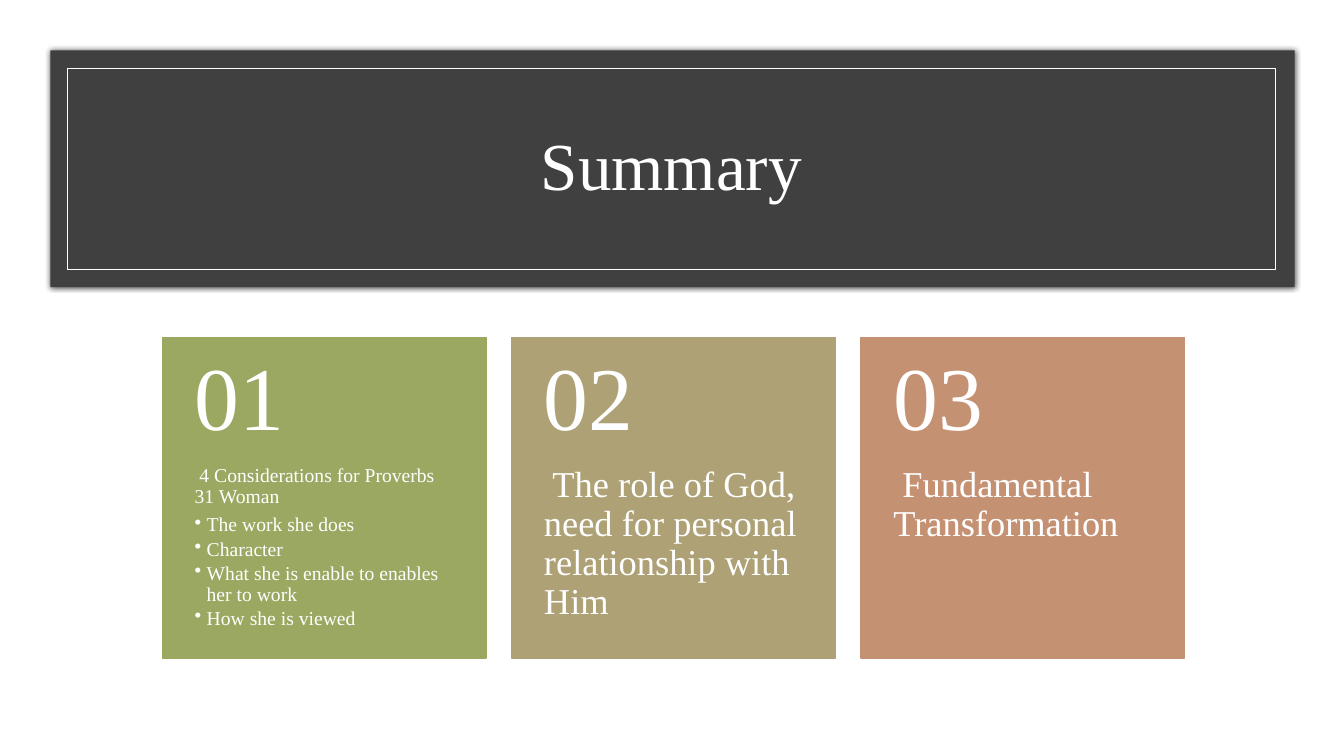
from dataclasses import dataclass

from lxml import etree
from pptx import Presentation
from pptx.dml.color import RGBColor
from pptx.enum.shapes import MSO_SHAPE
from pptx.enum.text import MSO_ANCHOR, PP_ALIGN
from pptx.oxml import parse_xml
from pptx.oxml.ns import nsdecls, qn
from pptx.util import Inches, Pt

RECT = MSO_SHAPE.RECTANGLE
TOP, MIDDLE = MSO_ANCHOR.TOP, MSO_ANCHOR.MIDDLE
LEFT, CENTER = PP_ALIGN.LEFT, PP_ALIGN.CENTER


@dataclass(frozen=True)
class Theme:
    font: str = "Times New Roman"
    text: str = "FFFFFF"
    banner: str = "404040"
    cards: tuple = ("9AA862", "ADA175", "C59173")
    title: int = 48
    number: int = 64
    statement: int = 26
    listing: int = 14


theme = Theme()
prs = Presentation()
prs.slide_width, prs.slide_height = Inches(13.33), Inches(7.5)
s = prs.slides.add_slide(prs.slide_layouts[6])


def add_rect(box, fill=None, line=None, width=1):
    sp = s.shapes.add_shape(RECT, *map(Inches, box))
    sp.shadow.inherit = False
    if fill:
        sp.fill.solid()
        sp.fill.fore_color.rgb = RGBColor.from_string(fill)
    else:
        sp.fill.background()
    if line:
        sp.line.color.rgb = RGBColor.from_string(line)
        sp.line.width = Pt(width)
    else:
        sp.line.fill.background()
    return sp


def add_text(box, text, size, bullets=(), align=LEFT, anchor=TOP,
             insets=(0.1, 0.05, 0.1, 0.05), after=0.35):
    """Add a text box; after is the paragraph spacing as a share of the type size."""
    tf = s.shapes.add_textbox(*map(Inches, box)).text_frame
    tf.word_wrap = True
    tf.vertical_anchor = anchor
    tf.margin_left, tf.margin_top, tf.margin_right, tf.margin_bottom = map(Inches, insets)
    for i, line in enumerate((text, *bullets)):
        p = tf.add_paragraph() if i else tf.paragraphs[0]
        p.alignment = align
        p.line_spacing = 0.9
        p.space_after = Pt(round(size * (0.15 if i else after), 1))
        r = p.add_run()
        r.text = line
        r.font.name = theme.font
        r.font.size = Pt(size)
        r.font.color.rgb = RGBColor.from_string(theme.text)
        if i:
            p.level = 1
            pPr = p._p.get_or_add_pPr()
            pPr.set("marL", str(Inches(0.12)))
            pPr.set("indent", str(-Inches(0.12)))
            etree.SubElement(pPr, qn("a:buChar")).set("char", "•")


# Title banner
banner = add_rect((0.5, 0.5, 12.34, 2.35), fill=theme.banner)
banner._element.spPr.find(qn("a:effectLst")).append(parse_xml(
    f'<a:outerShdw {nsdecls("a")} blurRad="{Pt(4)}" dist="0" dir="0" algn="ctr" rotWithShape="0">'
    '<a:srgbClr val="000000"><a:alpha val="66000"/></a:srgbClr></a:outerShdw>'))
add_rect((0.67, 0.68, 11.98, 1.99), line=theme.text, width=0.5)
add_text((1.16, 0.92, 11, 1.5), "Summary", theme.title, align=CENTER, anchor=MIDDLE, after=0)

# Numbered cards
cards = [
    (" 4 Considerations for Proverbs 31 Woman", theme.listing,
     ("The work she does", "Character",
      "What she is enable to enables her to work", "How she is viewed")),
    (" The role of God, need for personal relationship with Him", theme.statement, ()),
    (" Fundamental Transformation", theme.statement, ()),
]
card_left, card_top, card_w, card_h = 1.61, 3.35, 3.21, 3.18
pitch, number_h = 3.465, 1.27
for i, (text, size, bullets) in enumerate(cards):
    x = card_left + i * pitch
    color = theme.cards[i]
    add_rect((x, card_top, card_w, card_h), fill=color, line=color)
    add_text((x, card_top + number_h, card_w, card_h - number_h), text, size,
             bullets=bullets, insets=(0.32, 0, 0.32, 0.36))
    add_text((x, card_top, card_w, number_h), f"{i + 1:02}", theme.number,
             anchor=MIDDLE, insets=(0.32, 0.18, 0.32, 0.18))

prs.save("out.pptx")
